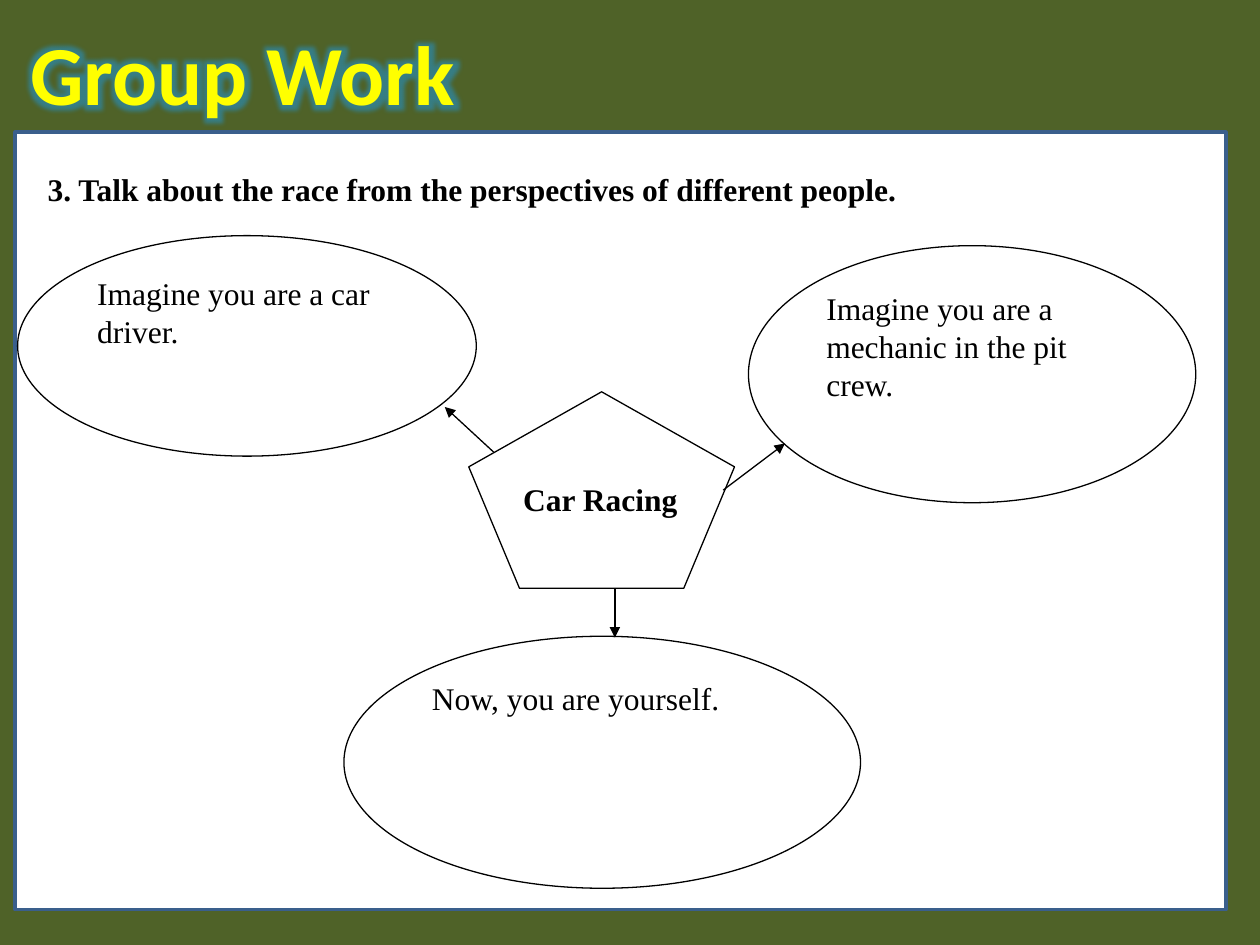
"""Build the Group Work slide: a car racing hub with three speaking prompts."""
from lxml import etree
from pptx import Presentation
from pptx.dml.color import RGBColor
from pptx.enum import shapes, text
from pptx.oxml import ns
from pptx.util import Inches, Pt

GREEN = RGBColor(0x4F, 0x62, 0x28)
WHITE = RGBColor(0xFF, 0xFF, 0xFF)
BLACK = RGBColor(0x00, 0x00, 0x00)
YELLOW = RGBColor(0xFF, 0xFF, 0x00)
BLUE = RGBColor(0x3A, 0x5F, 0x8C)
OUTLINE = RGBColor(0x46, 0x7A, 0xB8)
GLOW = RGBColor(0x31, 0x85, 0x9C)
KIND = shapes.MSO_SHAPE


def add_box(slide, kind, box, line_color=BLACK, line_width=0.75):
    shape = slide.shapes.add_shape(kind, *map(Inches, box))
    shape.shadow.inherit = False
    shape.fill.solid()
    shape.fill.fore_color.rgb = WHITE
    shape.line.color.rgb = line_color
    shape.line.width = Pt(line_width)
    return shape


def write(shape, wording, bold=False, align=text.PP_ALIGN.LEFT,
          anchor=text.MSO_ANCHOR.TOP, size=18, name="Times New Roman", color=BLACK):
    frame = shape.text_frame
    frame.word_wrap = True
    frame.vertical_anchor = anchor
    paragraph = frame.paragraphs[0]
    paragraph.alignment = align
    run = paragraph.add_run()
    run.text = wording
    run.font.size = Pt(size)
    run.font.bold = bold
    run.font.name = name
    run.font.color.rgb = color
    return run


presentation = Presentation()
presentation.slide_width = Inches(10)
presentation.slide_height = Inches(7.5)
slide = presentation.slides.add_slide(presentation.slide_layouts[5])
slide.background.fill.solid()
slide.background.fill.fore_color.rgb = GREEN

title = slide.shapes.title
title.left, title.top, title.width, title.height = map(Inches, (0.12, 0.12, 3.61, 0.91))
run = write(title, "Group Work", True, text.PP_ALIGN.CENTER,
            size=48, name="Calibri", color=YELLOW)
title.text_frame.word_wrap = False
title.text_frame.auto_size = text.MSO_AUTO_SIZE.SHAPE_TO_FIT_TEXT
properties = run.font._element
namespace = ns.nsdecls("a")
properties.insert(0, etree.fromstring(
    f'<a:ln {namespace} w="{Pt(0.83)}"><a:solidFill><a:srgbClr val="{OUTLINE}"/>'
    '</a:solidFill></a:ln>'))
properties.find(ns.qn("a:solidFill")).addnext(etree.fromstring(
    f'<a:effectLst {namespace}><a:glow rad="{Pt(11)}"><a:srgbClr val="{GLOW}">'
    '<a:alpha val="80000"/></a:srgbClr></a:glow></a:effectLst>'))

add_box(slide, KIND.RECTANGLE, (0.12, 1.05, 9.61, 6.17), BLUE, 2)

instruction = slide.shapes.add_textbox(*map(Inches, (0.28, 1.3, 9.37, 0.4)))
write(instruction, "3. Talk about the race from the perspectives of different people.",
      True, anchor=text.MSO_ANCHOR.MIDDLE)
instruction.text_frame.auto_size = text.MSO_AUTO_SIZE.SHAPE_TO_FIT_TEXT

add_box(slide, KIND.REGULAR_PENTAGON, (3.72, 3.11, 2.11, 1.56))
hub_label = add_box(slide, KIND.RECTANGLE, (3.98, 3.76, 1.57, 0.47), WHITE)
write(hub_label, "Car Racing", True, text.PP_ALIGN.CENTER)

prompts = [
    ("Imagine you are a car driver.", (0.14, 1.87, 3.64, 1.75), (3.92, 3.59, 3.53, 3.23)),
    ("Imagine you are a mechanic in the pit crew.", (5.94, 1.95, 3.55, 2.04),
     (5.74, 3.89, 6.23, 3.52)),
    ("Now, you are yourself.", (2.73, 5.05, 4.1, 2), (4.88, 4.67, 4.88, 5.06)),
]
for wording, box, ends in prompts:
    write(add_box(slide, KIND.OVAL, box), wording)
    arrow = slide.shapes.add_connector(shapes.MSO_CONNECTOR.STRAIGHT, *map(Inches, ends))
    arrow.line.color.rgb = BLACK
    arrow.line.width = Pt(0.75)
    etree.SubElement(arrow.line._get_or_add_ln(), ns.qn("a:tailEnd"), type="triangle")
    etree.SubElement(arrow._element.spPr, ns.qn("a:effectLst"))

presentation.save("out.pptx")
